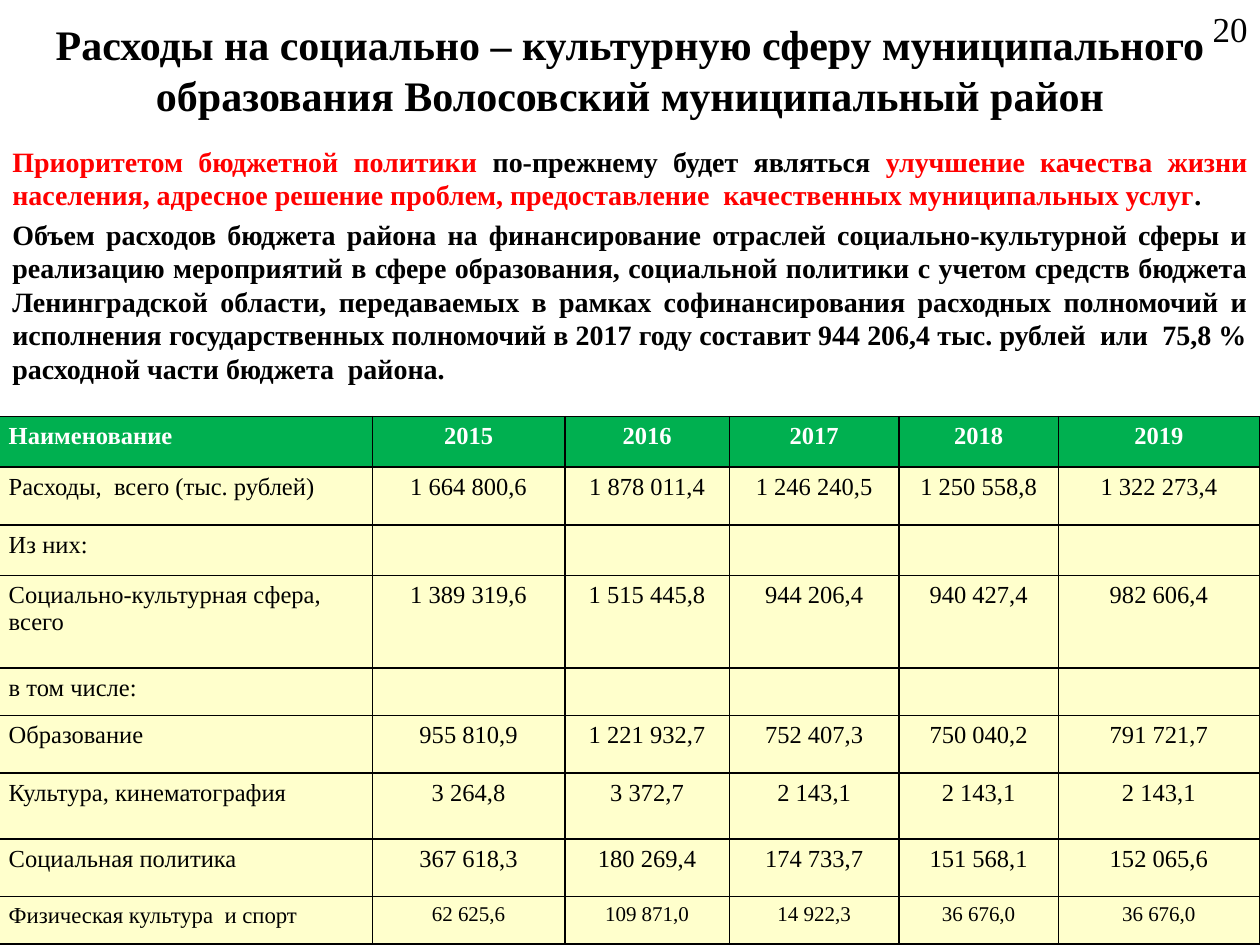
from lxml.etree import SubElement
from pptx import Presentation
from pptx.dml.color import RGBColor
from pptx.enum.text import MSO_ANCHOR as Anchor, PP_ALIGN as Align
from pptx.oxml.ns import qn
from pptx.util import Pt


def style(para, size, color, bold=False, align=Align.LEFT):
    para.alignment = align
    font = para.font
    font.name = "Times New Roman"
    font.size = Pt(size)
    font.bold = bold
    font.color.rgb = RGBColor.from_string(color)


def add_box(left, top, width, height, anchor=Anchor.TOP):
    box = slide.shapes.add_textbox(Pt(left), Pt(top), Pt(width), Pt(height))
    frame = box.text_frame
    frame.word_wrap = True
    frame.vertical_anchor = anchor
    return frame


BLACK, RED, WHITE = "000000", "FF0000", "FFFFFF"
GREEN, CREAM = "00B050", "FFFFCC"

deck = Presentation()
deck.slide_width, deck.slide_height = Pt(720), Pt(540)
slide = deck.slides.add_slide(deck.slide_layouts[6])

title = add_box(0, 0, 720, 79, Anchor.MIDDLE).paragraphs[0]
title.text = "Расходы на социально – культурную сферу муниципального образования Волосовский муниципальный район"
style(title, 24, BLACK, True, Align.CENTER)

body = add_box(0, 79, 720, 158)
goal = body.paragraphs[0]
style(goal, 16, BLACK, True, Align.JUSTIFY)
for text, color in [
    ("Приоритетом бюджетной политики", RED),
    (" по-прежнему будет являться ", BLACK),
    ("улучшение качества жизни населения, адресное решение проблем, "
     "предоставление  качественных муниципальных услуг", RED),
    (".", BLACK),
]:
    run = goal.add_run()
    run.text = text
    run.font.color.rgb = RGBColor.from_string(color)

volume = body.add_paragraph()
volume.text = (
    "Объем расходов бюджета района на финансирование отраслей социально-культурной сферы "
    "и реализацию мероприятий в сфере образования, социальной политики с учетом средств "
    "бюджета Ленинградской области, передаваемых в рамках софинансирования расходных "
    "полномочий и исполнения государственных полномочий в 2017 году составит "
    "944 206,4 тыс. рублей  или  75,8 % расходной части бюджета  района."
)
style(volume, 16, BLACK, True, Align.JUSTIFY)
volume.space_before = Pt(3.2)

rows = [
    (29, ["Наименование", "2015", "2016", "2017", "2018", "2019"]),
    (33, ["Расходы,  всего (тыс. рублей)", "1 664 800,6", "1 878 011,4", "1 246 240,5", "1 250 558,8", "1 322 273,4"]),
    (28.8, ["Из них:"] + [""] * 5),
    (53, ["Социально-культурная сфера, всего", "1 389 319,6", "1 515 445,8", "944 206,4", "940 427,4", "982 606,4"]),
    (27, ["в том числе:"] + [""] * 5),
    (33, ["Образование", "955 810,9", "1 221 932,7", "752 407,3", "750 040,2", "791 721,7"]),
    (37.7, ["Культура, кинематография", "3 264,8", "3 372,7", "2 143,1", "2 143,1", "2 143,1"]),
    (33, ["Социальная политика", "367 618,3", "180 269,4", "174 733,7", "151 568,1", "152 065,6"]),
    (27, ["Физическая культура  и спорт", "62 625,6", "109 871,0", "14 922,3", "36 676,0", "36 676,0"]),
]
cols = [215, 110, 94, 97, 91, 115]
table = slide.shapes.add_table(
    len(rows), len(cols), Pt(-2.2), Pt(238), Pt(sum(cols)), Pt(sum(high for high, _ in rows))
).table
for col, width in zip(table.columns, cols):
    col.width = Pt(width)

for i, (high, texts) in enumerate(rows):
    table.rows[i].height = Pt(high)
    head, last = i == 0, i == len(rows) - 1
    for j, text in enumerate(texts):
        cell = table.cell(i, j)
        props = cell._tc.get_or_add_tcPr()
        for side in ("lnL", "lnR", "lnT", "lnB"):
            line = SubElement(props, qn(f"a:{side}"), w=str(Pt(1)))
            fill = SubElement(line, qn("a:solidFill"))
            SubElement(fill, qn("a:srgbClr"), val=BLACK)
        cell.fill.solid()
        cell.fill.fore_color.rgb = RGBColor.from_string(GREEN if head else CREAM)
        para = cell.text_frame.paragraphs[0]
        para.text = text
        size = 14 if not last else 12 if j else 13
        style(para, size, WHITE if head else BLACK, head, Align.CENTER if j else Align.LEFT)

page = add_box(683, 2, 37, 29, Anchor.MIDDLE).paragraphs[0]
page.text = "20"
style(page, 20, BLACK, align=Align.RIGHT)

deck.save("out.pptx")
